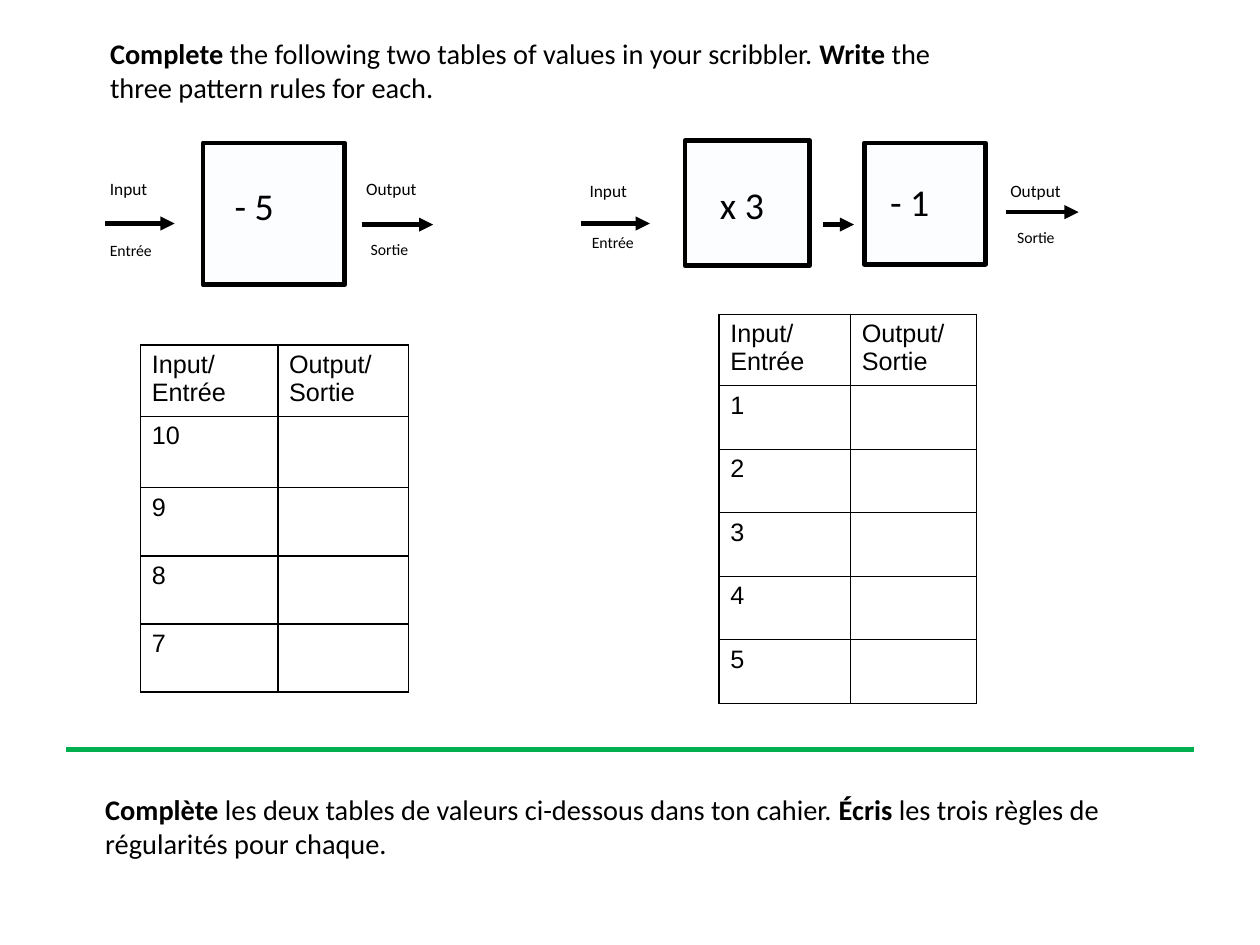
from lxml import etree
from pptx import Presentation, util as u
from pptx.dml.color import RGBColor
from pptx.enum import shapes as s, text as t
from pptx.oxml.ns import qn

BLACK, WHITE, GREEN, PALE = "000000", "FFFFFF", "00B050", "FCFDFF"
SIDES = "lnL", "lnR", "lnT", "lnB"

deck = Presentation()
deck.slide_width, deck.slide_height = u.Inches(11.11), u.Inches(8.33)
slide = deck.slides.add_slide(deck.slide_layouts[5])


def write(shape, place, size, *lines):
    """Place a text shape and fill it; words between asterisks are bold."""
    for name, value in zip(("left", "top", "width", "height"), place):
        setattr(shape, name, u.Inches(value))
    frame = shape.text_frame
    form = {"word_wrap": True, "auto_size": t.MSO_AUTO_SIZE.NONE,
            "vertical_anchor": t.MSO_ANCHOR.TOP}
    for name, value in form.items():
        setattr(frame, name, value)
    for i, line in enumerate(lines):
        para = frame.add_paragraph() if i else frame.paragraphs[0]
        para.alignment = t.PP_ALIGN.LEFT
        for j, part in enumerate(line.split("*")):
            if part:
                run = para.add_run()
                run.text = part
                look = {"name": "Calibri", "size": u.Pt(size), "bold": j % 2 == 1}
                for name, value in look.items():
                    setattr(run.font, name, value)
                run.font.color.rgb = RGBColor.from_string(BLACK)


def draw(left, right, top, color=BLACK, arrow=True):
    """Draw a level line from left to right."""
    ends = [u.Inches(n) for n in (left, top, right, top)]
    line = slide.shapes.add_connector(s.MSO_CONNECTOR.STRAIGHT, *ends)
    line.line.width = u.Pt(3)
    line.line.color.rgb = RGBColor.from_string(color)
    if arrow:
        etree.SubElement(line.line._get_or_add_ln(), qn("a:tailEnd"), type="triangle")
    etree.SubElement(line._element.spPr, qn("a:effectLst"))


# English task
write(slide.shapes.title, (0.87, 0.27, 7.91, 0.71), 18,
      "*Complete* the following two tables of values in your scribbler. "
      "*Write* the three pattern rules for each.")

# Machine boxes
for left, top, side in (1.79, 1.26, 1.25), (6.04, 1.24, 1.1), (7.62, 1.26, 1.07):
    box = slide.shapes.add_shape(s.MSO_SHAPE.RECTANGLE, u.Inches(left), u.Inches(top),
                                 u.Inches(side), u.Inches(side))
    box.shadow.inherit = False
    box.fill.solid()
    box.fill.fore_color.rgb = RGBColor.from_string(PALE)
    box.line.color.rgb = RGBColor.from_string(BLACK)
    box.line.width = u.Pt(3)

# Arrows in, between and out
for left, right, top in ((0.93, 1.54, 1.97), (3.19, 3.82, 1.98), (5.12, 5.73, 1.97),
                         (7.26, 7.53, 1.98), (8.87, 9.51, 1.87)):
    draw(left, right, top)

# Rules and arrow labels
labels = [
    ("- 5", 24, 1.97, 1.56), ("x 3", 24, 6.25, 1.55), ("- 1", 24, 7.75, 1.53),
    ("Input", 11, 0.87, 1.52), ("Output", 11, 3.13, 1.52),
    ("Input", 11, 5.1, 1.54), ("Output", 11, 8.81, 1.54),
    ("Entrée", 10, 0.87, 2.07), ("Sortie", 10, 3.17, 2.06),
    ("Entrée", 10, 5.12, 2), ("Sortie", 10, 8.87, 1.96),
]
for word, size, left, top in labels:
    label = slide.shapes.add_textbox(0, 0, 0, 0)
    write(label, (left, top, 0.9, size / 48), size, word)

# Tables of values
tables = [
    (1.24, 3.04, (1.21, 1.15), (0.63, 0.63, 0.6, 0.6, 0.6), (10, 9, 8, 7)),
    (6.34, 2.77, (1.16, 1.11), (0.63,) + (0.56,) * 5, (1, 2, 3, 4, 5)),
]
for left, top, cols, rows, inputs in tables:
    grid = slide.shapes.add_table(len(rows), len(cols), u.Inches(left), u.Inches(top),
                                  u.Inches(sum(cols)), u.Inches(sum(rows))).table
    grid.first_row = grid.horz_banding = False
    for col, width in zip(grid.columns, cols):
        col.width = u.Inches(width)
    for row, height in zip(grid.rows, rows):
        row.height = u.Inches(height)
    words = ["Input/ Entrée", "Output/ Sortie"]
    for n in inputs:
        words += [str(n), ""]
    for cell, word in zip(grid.iter_cells(), words):
        props = cell._tc.get_or_add_tcPr()
        for side in SIDES:
            edge = etree.SubElement(props, qn("a:" + side), w=str(u.Pt(1)))
            fill = etree.SubElement(edge, qn("a:solidFill"))
            etree.SubElement(fill, qn("a:srgbClr"), val=BLACK)
        cell.fill.solid()
        cell.fill.fore_color.rgb = RGBColor.from_string(WHITE)
        cell.text = word
        font = cell.text_frame.paragraphs[0].font
        font.name, font.size = "Arial", u.Pt(16)
        font.color.rgb = RGBColor.from_string(BLACK)

# French task below the rule
draw(0.58, 10.53, 6.61, GREEN, arrow=False)
task = slide.shapes.add_textbox(0, 0, 0, 0)
write(task, (0.83, 6.93, 9.6, 0.71), 18,
      "*Complète* les deux tables de valeurs ci-dessous dans ton cahier. "
      "*Écris* les trois règles de",
      "régularités pour chaque.")

deck.save("out.pptx")
